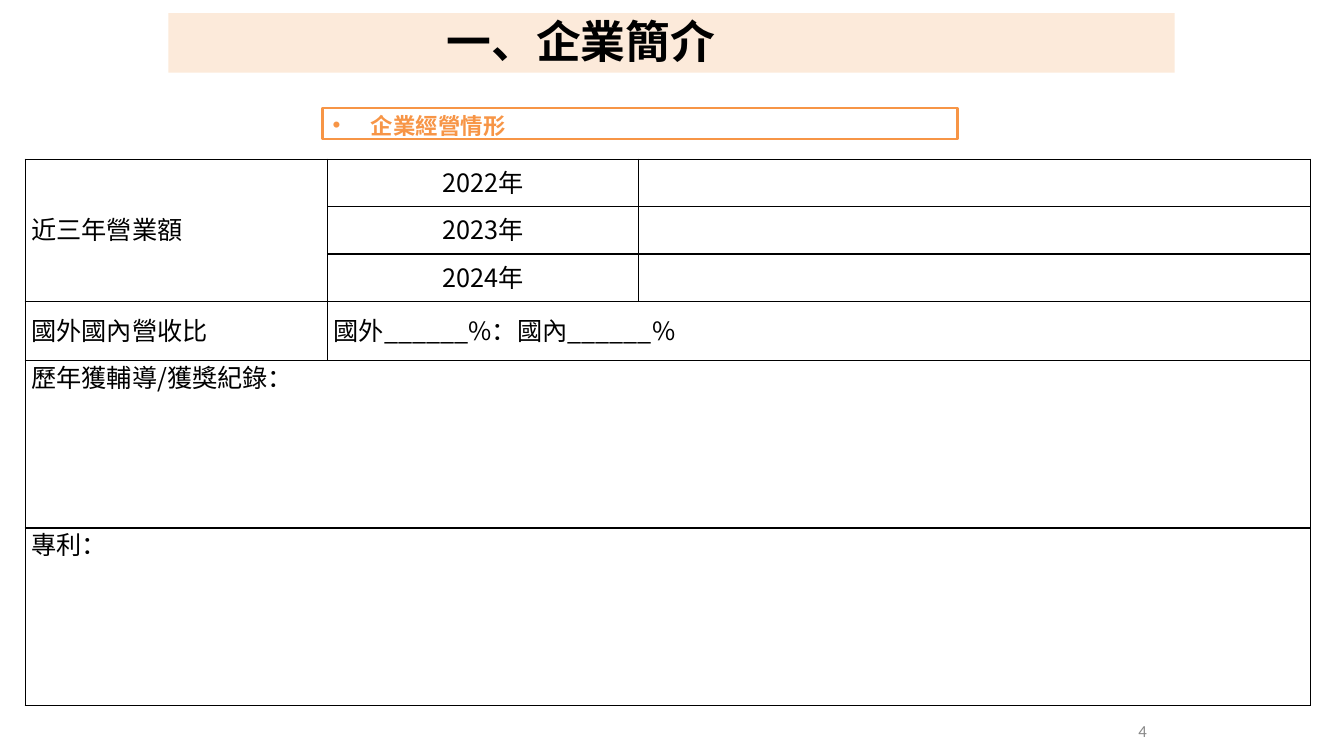
from dataclasses import dataclass, field
from typing import Any

from lxml import etree
from pptx import Presentation
from pptx import util as u
from pptx.dml.color import RGBColor
from pptx.enum import shapes, text
from pptx.oxml import ns

PX = 9144
FONT = "Noto Sans CJK SC"
COLOURS = {"ink": "000000", "band": "FCEADA", "accent": "F79546", "number": "888888"}
COLUMNS = (300, 308, 667)
ROWS = (47, 47, 47, 59, 166, 176)
BORDERS = ("a:lnL", "a:lnR", "a:lnT", "a:lnB")


def px(length: int) -> u.Emu:
    return u.Emu(length * PX)


def colour(name: str) -> RGBColor:
    return RGBColor.from_string(COLOURS[name])


@dataclass(frozen=True)
class Style:
    size: int
    colour: str = "ink"
    font: str = FONT
    bold: bool = False
    tracking: int = 0
    indent: int = 0
    hanging: int = 0
    bullet: str = ""
    paragraph: dict[str, Any] = field(default_factory=dict)


@dataclass(frozen=True)
class Box:
    area: tuple[int, int, int, int]
    words: str = ""
    style: Style = Style(18)
    top_inset: int = 0
    fill: str = ""
    line: str = ""


@dataclass(frozen=True)
class Entry:
    row: int
    column: int
    words: str = ""
    rows: int = 1
    columns: int = 1
    centred: bool = False
    anchor: text.MSO_ANCHOR = text.MSO_ANCHOR.MIDDLE


BOXES = (
    Box((167, 13, 998, 59), fill="band"),
    Box((442, 13, 425, 55), "一、企業簡介",
        Style(32, bold=True, tracking=-10, indent=1, paragraph={"space_before": u.Pt(0.9)}),
        top_inset=1),
    Box((320, 107, 630, 31), "企業經營情形",
        Style(16, "accent", bold=True, tracking=10, indent=48, hanging=-38, bullet="•",
              paragraph={"space_before": u.Pt(3.1)}),
        top_inset=4, line="accent"),
    Box((1125, 718, 17, 19), "4",
        Style(12, "number", "Calibri", indent=4, paragraph={"line_spacing": u.Pt(12.4)})),
)

ENTRIES = (
    Entry(0, 0, "近三年營業額", rows=3),
    *(Entry(row, 1, f"{2022 + row}年", centred=True) for row in range(3)),
    Entry(3, 0, "國外國內營收比"),
    Entry(3, 1, "國外______%：國內______%", columns=2),
    Entry(4, 0, "歷年獲輔導/獲獎紀錄：", columns=3, anchor=text.MSO_ANCHOR.TOP),
    Entry(5, 0, "專利：", columns=3, anchor=text.MSO_ANCHOR.TOP),
)


def set_values(target: Any, values: dict[str, Any]) -> None:
    for name, value in values.items():
        setattr(target, name, value)


def write(frame: Any, words: str, style: Style) -> None:
    paragraph = frame.paragraphs[0]
    set_values(paragraph, {"alignment": text.PP_ALIGN.LEFT, **style.paragraph})
    properties = paragraph._p.get_or_add_pPr()
    properties.set("marL", str(px(style.indent)))
    properties.set("indent", str(px(style.hanging)))
    if style.bullet:
        etree.SubElement(properties, ns.qn("a:buFont"), typeface="Arial")
        etree.SubElement(properties, ns.qn("a:buChar"), char=style.bullet)
    run = paragraph.add_run()
    run.text = words
    set_values(run.font, {"name": style.font, "size": u.Pt(style.size), "bold": style.bold})
    run.font.color.rgb = colour(style.colour)
    run_properties = run._r.get_or_add_rPr()
    run_properties.set("spc", str(style.tracking))
    etree.SubElement(run_properties, ns.qn("a:ea"), typeface=style.font)


def draw_box(slide: Any, box: Box) -> None:
    area = map(px, box.area)
    if box.fill or box.line:
        shape = slide.shapes.add_shape(shapes.MSO_SHAPE.RECTANGLE, *area)
        shape.shadow.inherit = False
        shape.fill.background()
        shape.line.fill.background()
    else:
        shape = slide.shapes.add_textbox(*area)
    if box.fill:
        shape.fill.solid()
        shape.fill.fore_color.rgb = colour(box.fill)
    if box.line:
        shape.line.color.rgb = colour(box.line)
        shape.line.width = u.Pt(1.92)
    if box.words:
        set_values(shape.text_frame, {
            "margin_left": 0, "margin_right": 0, "margin_bottom": 0,
            "margin_top": px(box.top_inset), "word_wrap": True,
            "vertical_anchor": text.MSO_ANCHOR.TOP,
            "auto_size": text.MSO_AUTO_SIZE.NONE,
        })
        write(shape.text_frame, box.words, box.style)


def format_cell(cell: Any) -> None:
    set_values(cell, {"margin_left": px(6), "margin_right": px(6),
                      "margin_top": 0, "margin_bottom": 0})
    properties = cell._tc.get_or_add_tcPr()
    for border in BORDERS:
        line = etree.SubElement(properties, ns.qn(border), w=str(u.Pt(1)))
        fill = etree.SubElement(line, ns.qn("a:solidFill"))
        etree.SubElement(fill, ns.qn("a:srgbClr"), val=COLOURS["ink"])
    cell.fill.background()


def draw_table(slide: Any) -> None:
    frame = slide.shapes.add_table(len(ROWS), len(COLUMNS), px(25), px(158),
                                   px(sum(COLUMNS)), px(sum(ROWS)))
    table = frame.table
    set_values(table, {"first_row": False, "horz_banding": False})
    for column, width in zip(table.columns, COLUMNS):
        column.width = px(width)
    for row, height in zip(table.rows, ROWS):
        row.height = px(height)
    for cell in table.iter_cells():
        format_cell(cell)
    for entry in ENTRIES:
        cell = table.cell(entry.row, entry.column)
        if entry.rows > 1 or entry.columns > 1:
            cell.merge(table.cell(entry.row + entry.rows - 1,
                                  entry.column + entry.columns - 1))
        cell.vertical_anchor = entry.anchor
        alignment = text.PP_ALIGN.CENTER if entry.centred else text.PP_ALIGN.LEFT
        write(cell.text_frame, entry.words,
              Style(18, paragraph={"line_spacing": u.Pt(24), "alignment": alignment}))


def main() -> None:
    presentation = Presentation()
    set_values(presentation, {"slide_width": px(1333), "slide_height": px(750)})
    slide = presentation.slides.add_slide(presentation.slide_layouts[6])
    for box in BOXES:
        draw_box(slide, box)
    draw_table(slide)
    presentation.save("out.pptx")


if __name__ == "__main__":
    main()
